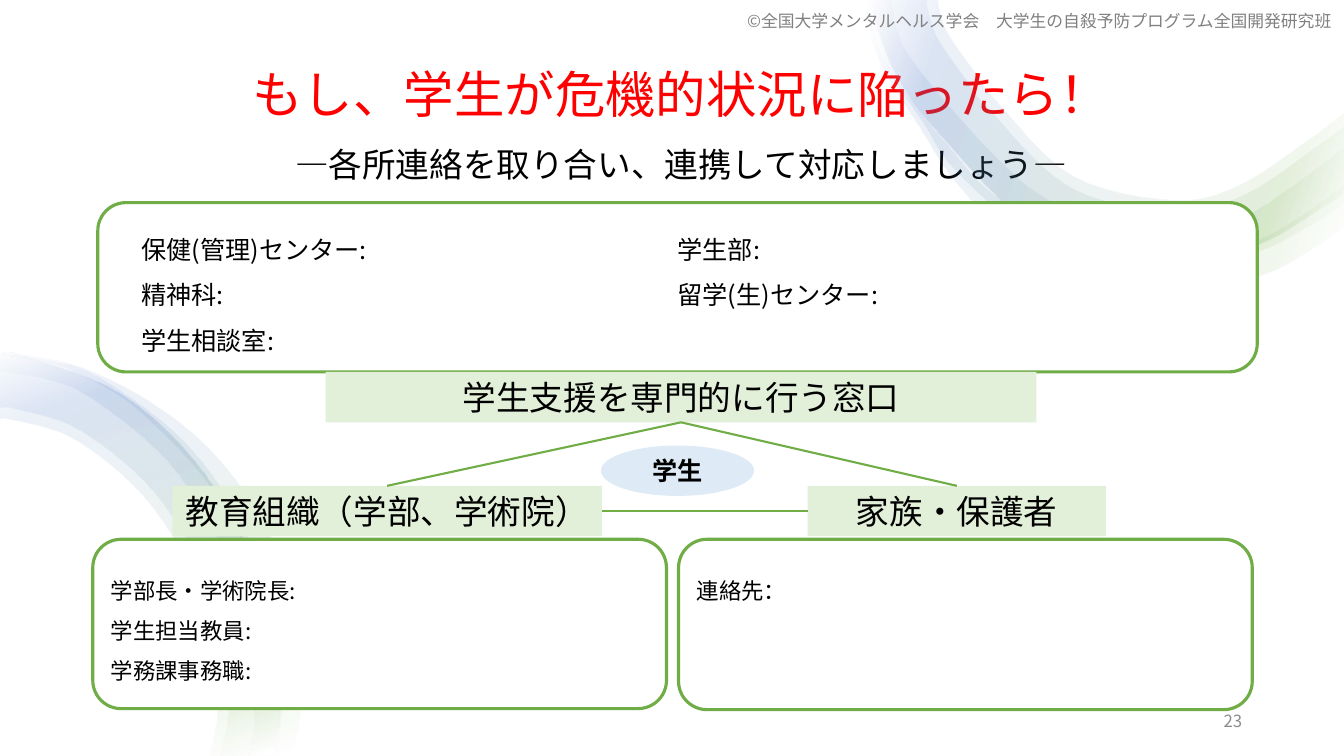
import pptx
import pptx.dml.color
import pptx.enum.shapes
import pptx.enum.text
import pptx.oxml
import pptx.oxml.ns
import pptx.util
from lxml import etree
from dataclasses import dataclass

Inches = pptx.util.Inches
SHAPES = pptx.enum.shapes.MSO_SHAPE
ALIGN = pptx.enum.text.PP_ALIGN
ANCHOR = pptx.enum.text.MSO_ANCHOR

TITLE = "もし、学生が危機的状況に陥ったら！"
SUBTITLE = "―各所連絡を取り合い、連携して対応しましょう―"
CREDIT = "©全国大学メンタルヘルス学会　大学生の自殺予防プログラム全国開発研究班"
PAGE_NUMBER = "23"
STUDENT = "学生"
# label: text, (left, top, width, height)
LABELS = {
    "support": ("学生支援を専門的に行う窓口", (3.23, 3.69, 7.05, 0.5)),
    "faculty": ("教育組織（学部、学術院）", (1.71, 4.82, 4.26, 0.5)),
    "family": ("家族・保護者", (8.01, 4.82, 2.96, 0.5)),
}
# start label, its side, end label, its side
LINKS = [("support", 2, "faculty", 0), ("family", 1, "faculty", 3), ("family", 0, "support", 2)]
SUPPORT_CONTACTS = ["　保健(管理)センター:", "　精神科:", "　学生相談室:　", "学生部:　", "留学(生)センター:"]
FACULTY_CONTACTS = ["学部長・学術院長:", "学生担当教員:", "学務課事務職:"]
FAMILY_CONTACTS = ["連絡先："]

# Each band runs along its outer edge and returns along its inner edge.
TOP_OUTER = [(8.65, 0), (8.65, 0.08), (8.89, 0.75), (9.34, 1.35), (10.3, 2.26), (11.64, 2.6),
             (12.48, 2.42), (13.19, 2), (13.33, 1.9)]
LEFT_OUTER = [(0, 3.52), (0.22, 3.53), (1.22, 3.92), (2.03, 4.7), (2.57, 5.73), (2.77, 6.89), (2.7, 7.5)]
TOP_BANDS = [
    ([(8.6, 0), (8.63, 0.28), (8.71, 0.56), (8.84, 0.82), (9.15, 1.3), (9.47, 1.79), (10.09, 2.44),
      (10.65, 2.73), (11.27, 2.87), (11.66, 2.89), (12.53, 2.72), (13.08, 2.42), (13.33, 2.23)],
     [(13.33, 1.83), (12.88, 2.15), (12.39, 2.41), (11.66, 2.56), (11.03, 2.51), (10.5, 2.35),
      (9.81, 1.89), (9.43, 1.47), (9.06, 1.02), (8.82, 0.67), (8.66, 0.27), (8.64, 0)]),
    ([(8.65, 0), (8.7, 0.38), (8.86, 0.77), (9.16, 1.23), (9.47, 1.69), (10.13, 2.27), (10.69, 2.5),
      (11.27, 2.62), (11.87, 2.64), (12.47, 2.5), (13, 2.23), (13.33, 2.01)],
     [(13.33, 1.46), (12.75, 1.89), (12.31, 2.15), (11.64, 2.32), (11.05, 2.27), (10.35, 1.96),
      (9.96, 1.64), (9.6, 1.27), (9.24, 0.85), (8.94, 0.43), (8.83, 0)]),
    (TOP_OUTER,
     [(13.33, 1.25), (13.05, 1.45), (12.35, 1.92), (11.64, 2.09), (10.61, 1.85), (9.79, 1.06),
      (9.59, 0.8), (9.3, 0.38), (9.2, 0.08), (9.2, 0)]),
    (TOP_OUTER,
     [(13.33, 1.12), (12.99, 1.37), (12.29, 1.83), (11.64, 1.98), (10.64, 1.74), (9.88, 1),
      (9.68, 0.73), (9.4, 0.33), (9.31, 0.06), (9.31, 0)]),
]
LEFT_BANDS = [
    (LEFT_OUTER,
     [(2.08, 7.5), (2.16, 6.89), (1.98, 5.88), (1.48, 4.99), (0.76, 4.37), (0.14, 4.17), (0, 4.16)]),
    (LEFT_OUTER,
     [(2.18, 7.5), (2.27, 6.89), (2.08, 5.85), (1.56, 4.92), (0.81, 4.28), (0.16, 4.06), (0, 4.05)]),
    ([(0, 3.52), (0.48, 3.58), (0.99, 3.75), (1.86, 4.42), (2.47, 5.35), (2.77, 6.45), (2.79, 7.02), (2.72, 7.5)],
     [(2.46, 7.5), (2.52, 7.01), (2.4, 5.97), (2.23, 5.48), (1.68, 4.6), (0.9, 3.95), (0.43, 3.76), (0, 3.69)]),
    ([(0, 3.5), (0.15, 3.51), (0.96, 3.71), (1.93, 4.32), (2.65, 5.26), (2.99, 6.42), (2.98, 7.03), (2.89, 7.5)],
     [(2.7, 7.5), (2.76, 7.01), (2.61, 5.91), (2.14, 4.91), (1.39, 4.09), (0.81, 3.73), (0.42, 3.59), (0, 3.53)]),
]


@dataclass(frozen=True)
class Theme:
    font: str = "Noto Sans CJK JP"
    black: str = "000000"
    white: str = "FFFFFF"
    red: str = "FF0000"
    green: str = "70AD47"
    blue: str = "4472C4"
    pale_green: str = "E2F0D9"
    pale_blue: str = "DEEBF7"
    number_grey: str = "8C8C8C"
    credit_grey: str = "808080"
    title: int = 36
    heading: int = 24
    body: int = 18
    contact: int = 16
    small: int = 12


THEME = Theme()


def color(code):
    return pptx.dml.color.RGBColor.from_string(code)


def style_span(span, size, code, bold=False):
    span.font.size = pptx.util.Pt(size)
    span.font.name = THEME.font
    span.font.bold = bold
    span.font.color.rgb = color(code)
    etree.SubElement(span.font._element, pptx.oxml.ns.qn("a:ea"), typeface=THEME.font)


def write(box, lines, size, code=THEME.black, align=ALIGN.LEFT, spacing=1.0, bold=False):
    frame = box.text_frame
    frame.word_wrap = True
    frame.vertical_anchor = ANCHOR.MIDDLE
    frame.text = "\n".join(lines)
    for para in frame.paragraphs:
        para.alignment = align
        para.line_spacing = spacing
        for span in para.runs:
            style_span(span, size, code, bold)


def add_box(page, kind, place, fill, line=None):
    box = page.shapes.add_shape(kind, *map(Inches, place))
    box.shadow.inherit = False
    box.fill.solid()
    box.fill.fore_color.rgb = color(fill)
    if line:
        box.line.color.rgb = color(line)
        box.line.width = pptx.util.Pt(2.25)
    else:
        box.line.fill.background()
    return box


def smooth(points, steps=6):
    """Return a Catmull-Rom curve through the points."""
    padded = [points[0], *points, points[-1]]
    curve = [points[0]]
    for a, b, c, d in zip(padded, padded[1:], padded[2:], padded[3:]):
        for step in range(1, steps + 1):
            t = step / steps
            curve.append(tuple(
                (2 * q + (r - p) * t + (2 * p - 5 * q + 4 * r - s) * t ** 2
                 + (3 * q - p - 3 * r + s) * t ** 3) / 2
                for p, q, r, s in zip(a, b, c, d)))
    return curve


def add_band(page, outer, inner, angle):
    outline = [(Inches(x), Inches(y)) for x, y in smooth(outer) + smooth(inner)]
    builder = page.shapes.build_freeform(*outline[0])
    builder.add_line_segments(outline[1:], close=True)
    band = builder.convert_to_shape()
    band.shadow.inherit = False
    band.line.fill.background()
    stops = [(2, THEME.white), (16, THEME.green), (85, THEME.blue), (100, THEME.white)]
    stop_xml = "".join(
        f'<a:gs pos="{place * 1000}"><a:srgbClr val="{code}"><a:alpha val="10000"/></a:srgbClr></a:gs>'
        for place, code in stops)
    gradient = pptx.oxml.parse_xml(
        f'<a:gradFill {pptx.oxml.ns.nsdecls("a")} rotWithShape="1"><a:gsLst>{stop_xml}</a:gsLst>'
        f'<a:lin ang="{angle * 60000}" scaled="0"/></a:gradFill>')
    band._element.spPr.find(pptx.oxml.ns.qn("a:custGeom")).addnext(gradient)


def add_title(page):
    title = page.shapes.title
    title.left, title.top, title.width, title.height = map(Inches, (2.15, 0.07, 9.21, 2.01))
    write(title, [TITLE + "\v" + SUBTITLE], THEME.heading, align=ALIGN.CENTER, spacing=1.5)
    title.text_frame.auto_size = pptx.enum.text.MSO_AUTO_SIZE.NONE
    para = title.text_frame.paragraphs[0]
    para.space_before = para.space_after = pptx.util.Pt(12)
    para.runs[0].font.size = pptx.util.Pt(THEME.title)
    para.runs[0].font.color.rgb = color(THEME.red)


def add_label(page, text, place):
    label = add_box(page, SHAPES.RECTANGLE, place, THEME.pale_green)
    write(label, [text], THEME.heading, align=ALIGN.CENTER)
    label.text_frame.margin_top = label.text_frame.margin_bottom = 0
    return label


def add_link(page, start, start_side, end, end_side):
    link = page.shapes.add_connector(pptx.enum.shapes.MSO_CONNECTOR.STRAIGHT, 0, 0, 0, 0)
    link.begin_connect(start, start_side)
    link.end_connect(end, end_side)
    link.line.color.rgb = color(THEME.green)
    link.line.width = pptx.util.Pt(1.5)
    etree.SubElement(link._element.spPr, pptx.oxml.ns.qn("a:effectLst"))


def main():
    deck = pptx.Presentation()
    deck.slide_width, deck.slide_height = Inches(13.33), Inches(7.5)
    page = deck.slides.add_slide(deck.slide_layouts[5])
    add_title(page)
    for bands, angle in ((TOP_BANDS, 200), (LEFT_BANDS, 250)):
        for outer, inner in bands:
            add_band(page, outer, inner, angle)

    panels = [((0.97, 2.01, 11.5, 1.68), SUPPORT_CONTACTS, THEME.body, 1.5),
              ((0.92, 5.35, 5.69, 1.68), FACULTY_CONTACTS, THEME.contact, 1.5),
              ((6.73, 5.35, 5.69, 1.69), FAMILY_CONTACTS, THEME.contact, 1.0)]
    boxes = []
    for place, lines, size, spacing in panels:
        box = add_box(page, SHAPES.ROUNDED_RECTANGLE, place, THEME.white, THEME.green)
        write(box, lines, size, spacing=spacing)
        boxes.append(box)
    boxes[0].text_frame._txBody.bodyPr.set("numCol", "2")
    boxes[2].text_frame.vertical_anchor = ANCHOR.TOP
    boxes[2].text_frame.margin_top = Inches(0.29)

    labels = {name: add_label(page, text, place) for name, (text, place) in LABELS.items()}
    student = add_box(page, SHAPES.OVAL, (5.96, 4.42, 1.52, 0.5), THEME.pale_blue)
    write(student, [STUDENT], THEME.body, align=ALIGN.CENTER, bold=True)
    for start, start_side, end, end_side in LINKS:
        add_link(page, labels[start], start_side, labels[end], end_side)

    for text, place, code, align in (
            (PAGE_NUMBER, (9.42, 6.95, 3, 0.4), THEME.number_grey, ALIGN.RIGHT),
            (CREDIT, (7.29, 0.01, 6.04, 0.4), THEME.credit_grey, ALIGN.CENTER)):
        box = page.shapes.add_textbox(*map(Inches, place))
        write(box, [text], THEME.small, code, align)
    deck.save("out.pptx")


if __name__ == "__main__":
    main()
